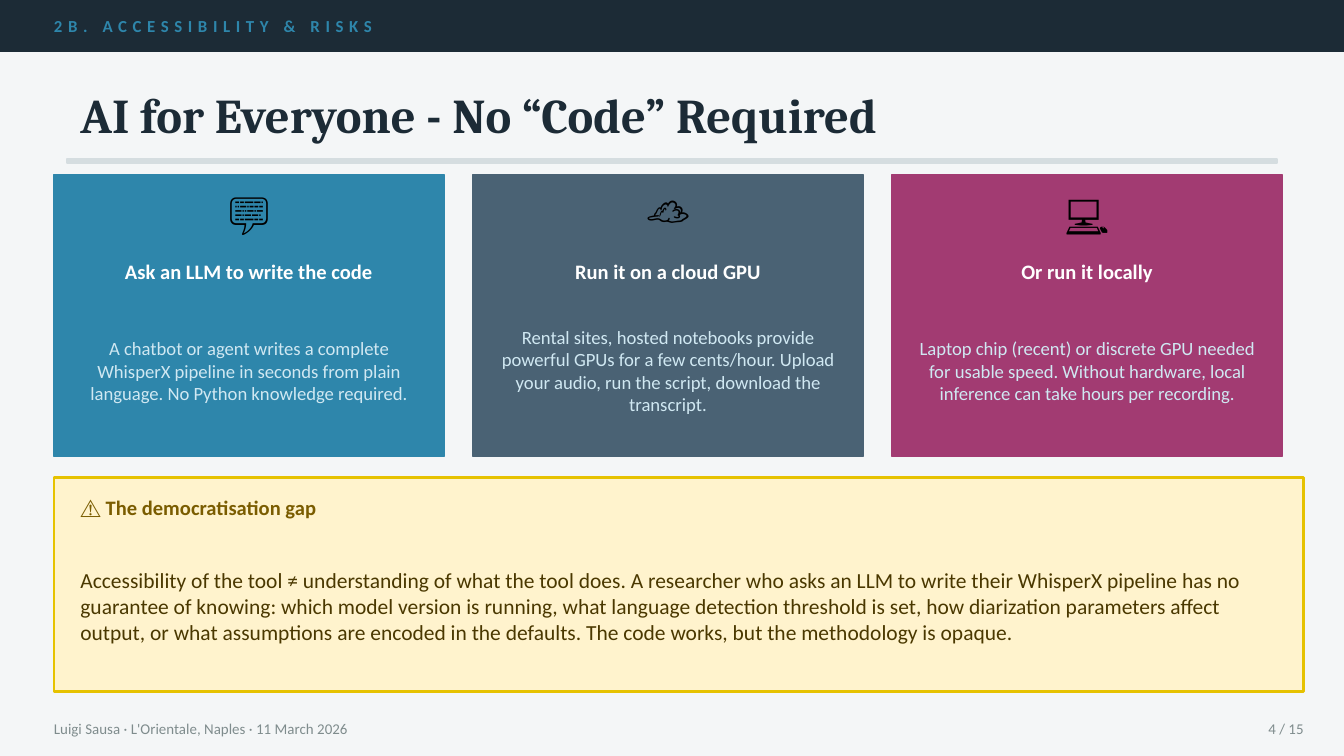
import pptx
import pptx.util
import pptx.dml.color
import pptx.enum.shapes
import pptx.enum.text

Cm = pptx.util.Cm
RGB = pptx.dml.color.RGBColor
ALIGN = pptx.enum.text.PP_ALIGN

NAVY = RGB(0x1C, 0x2B, 0x36)
BLUE = RGB(0x2E, 0x86, 0xAB)
SLATE = RGB(0x4A, 0x62, 0x74)
PLUM = RGB(0xA2, 0x3B, 0x72)
PAPER = RGB(0xF4, 0xF6, 0xF7)
RULE = RGB(0xD5, 0xDD, 0xE0)
PALE = RGB(0xD0, 0xE8, 0xF2)
CREAM = RGB(0xFF, 0xF3, 0xCD)
GOLD = RGB(0xE6, 0xC2, 0x00)
OCHRE = RGB(0x7A, 0x5C, 0x00)
BROWN = RGB(0x4A, 0x38, 0x00)
GREY = RGB(0x7F, 0x8C, 0x8D)
WHITE = RGB(0xFF, 0xFF, 0xFF)
BLACK = RGB(0, 0, 0)

SECTION = "2B. ACCESSIBILITY & RISKS"
TITLE = "AI for Everyone - No “Code” Required"
CARDS = [
    (BLUE, "💬", "Ask an LLM to write the code",
     "A chatbot or agent writes a complete WhisperX pipeline in seconds "
     "from plain language. No Python knowledge required."),
    (SLATE, "☁", "Run it on a cloud GPU",
     "Rental sites, hosted notebooks provide powerful GPUs for a few "
     "cents/hour. Upload your audio, run the script, download the "
     "transcript."),
    (PLUM, "💻", "Or run it locally",
     "Laptop chip (recent) or discrete GPU needed for usable speed. "
     "Without hardware, local inference can take hours per recording."),
]
GAP_HEAD = "⚠ The democratisation gap"
GAP_TEXT = (
    "Accessibility of the tool ≠ understanding of what the tool does. "
    "A researcher who asks an LLM to write their WhisperX pipeline has no "
    "guarantee of knowing: which model version is running, what language "
    "detection threshold is set, how diarization parameters affect output, "
    "or what assumptions are encoded in the defaults. The code works, but "
    "the methodology is opaque."
)
FOOTER = "Luigi Sausa · L'Orientale, Naples · 11 March 2026"
PAGE = "4 / 15"

LEFT = 1.02
CARD_W, CARD_H, CARD_TOP, PITCH = 7.37, 5.33, 3.3, 7.92
PAD = 0.25


def place(shape, box):
    shape.left, shape.top, shape.width, shape.height = map(Cm, box)


def write(shape, text, size, color, bold=False, align=ALIGN.LEFT,
          face="Calibri", inset=0.0):
    """Fill a shape with one vertically centred paragraph."""
    frame = shape.text_frame
    frame.word_wrap = True
    frame.auto_size = pptx.enum.text.MSO_AUTO_SIZE.NONE
    frame.vertical_anchor = pptx.enum.text.MSO_ANCHOR.MIDDLE
    frame.margin_left = frame.margin_right = Cm(inset)
    frame.margin_top = frame.margin_bottom = Cm(inset)
    para = frame.paragraphs[0]
    para.text = text
    para.alignment = align
    font = para.font
    font.name, font.size, font.bold = face, pptx.util.Pt(size), bold
    font.color.rgb = color
    return para


def label(slide, box, *args, **style):
    return write(slide.shapes.add_textbox(*map(Cm, box)), *args, **style)


def panel(slide, box, fill, line=None, width=1):
    kind = pptx.enum.shapes.MSO_SHAPE.RECTANGLE
    shape = slide.shapes.add_shape(kind, *map(Cm, box))
    shape.shadow.inherit = False
    shape.fill.solid()
    shape.fill.fore_color.rgb = fill
    shape.line.color.rgb = line or fill
    shape.line.width = pptx.util.Pt(width)


def card(slide, left, color, icon, head, body):
    mid = ALIGN.CENTER
    inner, wide = left + PAD, CARD_W - 2 * PAD
    panel(slide, (left, CARD_TOP, CARD_W, CARD_H), color)
    label(slide, (left, 3.38, CARD_W, 1.27), icon, 22, BLACK, align=mid)
    label(slide, (inner, 4.65, wide, 0.97), head, 11, WHITE, True, mid)
    label(slide, (inner, 5.61, wide, 2.79), body, 10, PALE,
          align=mid, inset=0.15)


def main():
    deck = pptx.Presentation()
    deck.slide_width, deck.slide_height = Cm(25.4), Cm(14.29)
    slide = deck.slides.add_slide(deck.slide_layouts[5])
    slide.background.fill.solid()
    slide.background.fill.fore_color.rgb = PAPER

    panel(slide, (0, 0, 25.4, 0.97), NAVY)
    para = label(slide, (LEFT, 0, 23.37, 0.97), SECTION, 9, BLUE, True)
    para.runs[0].font._element.set("spc", "300")

    title = slide.shapes.title
    place(title, (1.27, 1.27, 22.86, 1.78))
    write(title, TITLE, 26, NAVY, True, face="Cambria", inset=0.25)
    panel(slide, (1.27, 3, 22.86, 0.08), RULE)

    for i, item in enumerate(CARDS):
        card(slide, LEFT + i * PITCH, *item)

    panel(slide, (LEFT, 9.02, 23.62, 4.06), CREAM, GOLD, 1.5)
    label(slide, (1.52, 9.19, 22.61, 0.81), GAP_HEAD, 11, OCHRE, True)
    label(slide, (1.52, 10.06, 22.61, 2.79), GAP_TEXT, 11.5, BROWN)

    label(slide, (LEFT, 13.41, 20.32, 0.71), FOOTER, 8, GREY)
    label(slide, (22.86, 13.41, 1.78, 0.71), PAGE, 8, GREY,
          align=ALIGN.RIGHT)
    deck.save("out.pptx")


if __name__ == "__main__":
    main()
